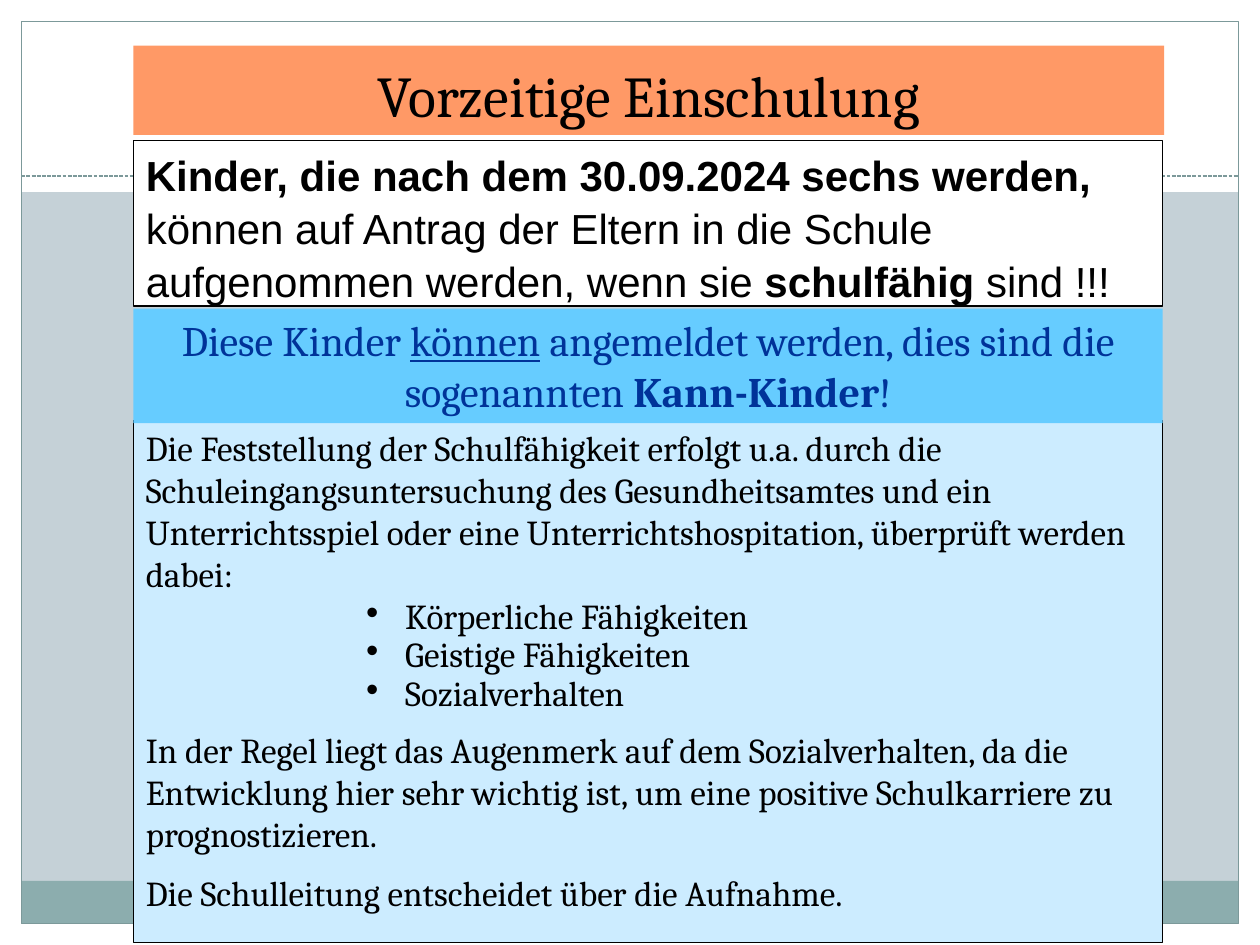
from lxml import etree
from pptx import Presentation
from pptx.dml.color import RGBColor
from pptx.enum.dml import MSO_LINE
from pptx.enum.shapes import MSO_CONNECTOR, MSO_SHAPE
from pptx.enum.text import MSO_ANCHOR, MSO_AUTO_SIZE, PP_ALIGN
from pptx.oxml.ns import qn
from pptx.util import Cm, Pt

RECTANGLE = MSO_SHAPE.RECTANGLE
LEFT, CENTER = PP_ALIGN.LEFT, PP_ALIGN.CENTER
TOP, BOTTOM = MSO_ANCHOR.TOP, MSO_ANCHOR.BOTTOM

COLORS = {
    "background": "C5D1D7", "white": "FFFFFF", "band": "8CADAE",
    "frame": "7C999A", "orange": "FF9966", "black": "000000",
    "sky": "66CCFF", "pale": "CCECFF", "navy": "003399",
}

# Lengths are in centimetres
WIDTH, HEIGHT, MARGIN = 25.4, 19.05, 0.43
HEADER_HEIGHT, BAND_HEIGHT, DIVIDER_TOP = 3.87, 0.86, 3.55
BOX_LEFT, BOX_WIDTH = 2.69, 20.75
BULLET_MARGIN, BULLET_HANG = 5.23, 0.79

# Each paragraph is a list of (text, style) spans
TITLE = [[("Vorzeitige Einschulung", "")]]
RULE = [[
    ("Kinder, die nach dem 30.09.2024 sechs werden, ", "bold"),
    ("können auf Antrag der Eltern in die Schule aufgenommen werden, "
     "wenn sie ", ""),
    ("schulfähig", "bold"),
    (" sind !!!", ""),
]]
ASSESSMENT = [[(
    "Die Feststellung der Schulfähigkeit erfolgt u.a. durch die "
    "Schuleingangsuntersuchung des Gesundheitsamtes und ein "
    "Unterrichtsspiel oder eine Unterrichtshospitation, überprüft "
    "werden dabei:", "")]]
SKILLS = [[(skill, "")] for skill in (
    "Körperliche Fähigkeiten", "Geistige Fähigkeiten", "Sozialverhalten")]
DECISION = [
    [("In der Regel liegt das Augenmerk auf dem Sozialverhalten, da die "
      "Entwicklung hier sehr wichtig ist, um eine positive Schulkarriere "
      "zu prognostizieren.", "")],
    [("Die Schulleitung entscheidet über die Aufnahme.", "")],
]
OPTIONAL = [[
    ("Diese Kinder ", ""),
    ("können", "underline"),
    (" angemeldet werden, dies sind die sogenannten ", ""),
    ("Kann-Kinder", "bold"),
    ("!", ""),
]]


def color(name):
    return RGBColor.from_string(COLORS[name])


def add_rectangle(page, left, top, width, height, fill=None, line=None):
    box = page.shapes.add_shape(
        RECTANGLE, Cm(left), Cm(top), Cm(width), Cm(height))
    box.shadow.inherit = False
    if fill:
        box.fill.solid()
        box.fill.fore_color.rgb = color(fill)
    else:
        box.fill.background()
    if line:
        box.line.color.rgb = color(line)
        box.line.width = Pt(0.75)
    else:
        box.line.fill.background()
    return box


def add_bullet(para):
    properties = para._p.get_or_add_pPr()
    properties.set("marL", str(Cm(BULLET_MARGIN)))
    properties.set("indent", str(-Cm(BULLET_HANG)))
    etree.SubElement(properties, qn("a:buFont")).set("typeface", "Arial")
    etree.SubElement(properties, qn("a:buChar")).set("char", "•")


def write(box, paragraphs, size=20, font="Cambria", ink="black", align=LEFT,
          anchor=TOP, before=0, spacing=1.0, bullet=False):
    """Add paragraphs after any text that the box already holds."""
    frame = box.text_frame
    frame.word_wrap = True
    frame.auto_size = MSO_AUTO_SIZE.NONE
    frame.vertical_anchor = anchor
    for spans in paragraphs:
        para = frame.add_paragraph() if frame.text else frame.paragraphs[0]
        para.alignment = align
        para.space_before = Pt(before)
        para.line_spacing = spacing
        if bullet:
            add_bullet(para)
        for text, style in spans:
            span = para.add_run()
            span.text = text
            span.font.name = font
            span.font.size = Pt(size)
            span.font.color.rgb = color(ink)
            span.font.bold = style == "bold"
            span.font.underline = style == "underline"


def add_backdrop(page):
    page.background.fill.solid()
    page.background.fill.fore_color.rgb = color("background")
    bottom = HEIGHT - MARGIN
    inner_width = WIDTH - 2 * MARGIN
    for left, top, width, height, fill in (
        (0, bottom, WIDTH, MARGIN, "white"),
        (0, 0, WIDTH, HEADER_HEIGHT, "white"),
        (0, 0, MARGIN, HEIGHT, "white"),
        (WIDTH - MARGIN, 0, MARGIN, HEIGHT, "white"),
        (MARGIN, bottom - BAND_HEIGHT, inner_width, BAND_HEIGHT, "band"),
    ):
        add_rectangle(page, left, top, width, height, fill)
    add_rectangle(page, MARGIN, MARGIN, inner_width, HEIGHT - 2 * MARGIN,
                  line="frame")
    divider = page.shapes.add_connector(
        MSO_CONNECTOR.STRAIGHT, Cm(MARGIN), Cm(DIVIDER_TOP),
        Cm(WIDTH - MARGIN), Cm(DIVIDER_TOP))
    divider.line.color.rgb = color("frame")
    divider.line.width = Pt(0.75)
    divider.line.dash_style = MSO_LINE.SQUARE_DOT
    etree.SubElement(divider.element.spPr, qn("a:effectLst"))


def add_title(page):
    title = page.shapes.title
    title.left, title.top = Cm(BOX_LEFT), Cm(0.92)
    title.width, title.height = Cm(BOX_WIDTH + 0.03), Cm(1.8)
    title.fill.solid()
    title.fill.fore_color.rgb = color("orange")
    write(title, TITLE, size=33, align=CENTER, anchor=BOTTOM)
    # Bring the title in front of the backdrop
    title.element.getparent().append(title.element)


def main():
    deck = Presentation()
    deck.slide_width, deck.slide_height = Cm(WIDTH), Cm(HEIGHT)
    page = deck.slides.add_slide(deck.slide_layouts[5])
    add_backdrop(page)
    add_title(page)

    rule_box = add_rectangle(
        page, BOX_LEFT, 2.84, BOX_WIDTH, 3.33, "white", "black")
    write(rule_box, RULE, size=24, font="Arial", spacing=1.05)

    detail_box = add_rectangle(
        page, BOX_LEFT, 8.48, BOX_WIDTH, 10.52, "pale", "black")
    write(detail_box, ASSESSMENT)
    write(detail_box, SKILLS, before=10, spacing=0.5, bullet=True)
    write(detail_box, DECISION, before=10)

    optional_box = add_rectangle(
        page, BOX_LEFT, 6.22, BOX_WIDTH, 2.31, "sky")
    write(optional_box, OPTIONAL, size=24, ink="navy", align=CENTER)
    deck.save("out.pptx")


if __name__ == "__main__":
    main()
